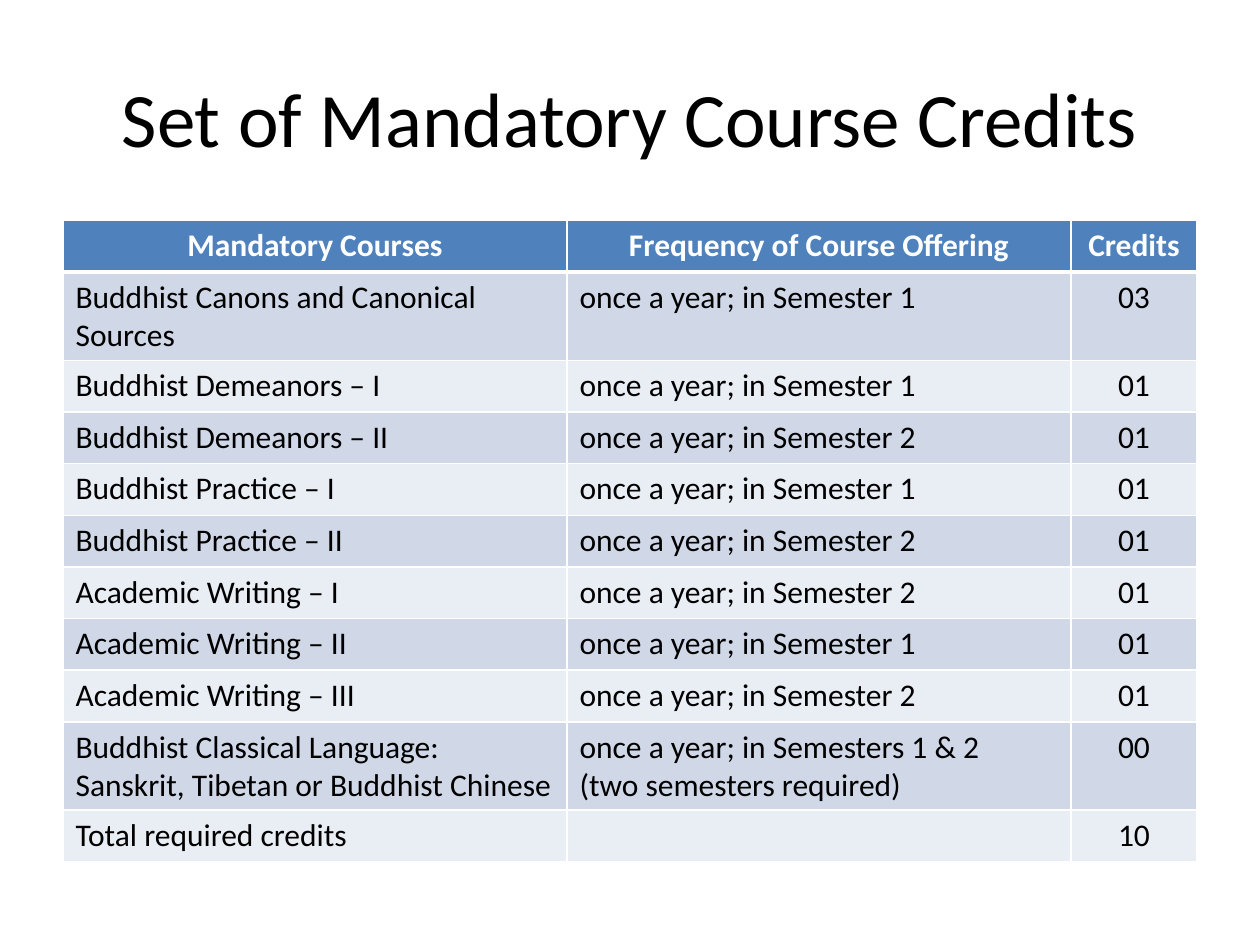
from pptx import Presentation
from pptx.dml.color import RGBColor
from pptx.enum.text import MSO_ANCHOR, PP_ALIGN
from pptx.oxml import parse_xml
from pptx.oxml.ns import nsdecls
from pptx.util import Inches, Pt

HEADER = ("Mandatory Courses", "Frequency of Course Offering", "Credits")
SEM_1 = "once a year; in Semester 1"
SEM_2 = "once a year; in Semester 2"
COURSES = [
    ("Buddhist Canons and Canonical Sources", SEM_1, "03"),
    ("Buddhist Demeanors – I", SEM_1, "01"),
    ("Buddhist Demeanors – II", SEM_2, "01"),
    ("Buddhist Practice – I", SEM_1, "01"),
    ("Buddhist Practice – II", SEM_2, "01"),
    ("Academic Writing – I", SEM_2, "01"),
    ("Academic Writing – II", SEM_1, "01"),
    ("Academic Writing – III", SEM_2, "01"),
    ("Buddhist Classical Language: Sanskrit, Tibetan or Buddhist Chinese",
     "once a year; in Semesters 1 & 2\n(two semesters required)", "00"),
    ("Total required credits", "", "10"),
]


def rgb(value):
    return RGBColor.from_string(value)


class Deck:
    font = "Calibri"
    ink = "000000"
    white = "FFFFFF"
    accent = "4F81BD"
    bands = ("D0D8E8", "E9EDF4")

    def __init__(self, width, height):
        self.prs = Presentation()
        self.prs.slide_width = Inches(width)
        self.prs.slide_height = Inches(height)
        self.s = self.prs.slides.add_slide(self.prs.slide_layouts[6])

    def add_text(self, tf, text, size, color, bold=False, align=PP_ALIGN.LEFT):
        for i, line in enumerate(text.split("\n")):
            p = tf.add_paragraph() if i else tf.paragraphs[0]
            p.alignment = align
            if not line:
                p.font.size = Pt(size)
                continue
            r = p.add_run()
            r.text = line
            r.font.name = self.font
            r.font.size = Pt(size)
            r.font.bold = bold
            r.font.color.rgb = rgb(color)

    def title(self, text, left, top, width, height):
        sp = self.s.shapes.add_textbox(
            Inches(left), Inches(top), Inches(width), Inches(height))
        tf = sp.text_frame
        tf.word_wrap = True
        tf.vertical_anchor = MSO_ANCHOR.MIDDLE
        self.add_text(tf, text, 44, self.ink, align=PP_ALIGN.CENTER)

    def borders(self, cell, top, bottom):
        tc_pr = cell._tc.get_or_add_tcPr()
        for side, points in (("L", 1), ("R", 1), ("T", top), ("B", bottom)):
            tc_pr.append(parse_xml(
                f'<a:ln{side} {nsdecls("a")} w="{Pt(points)}"><a:solidFill>'
                f'<a:srgbClr val="{self.white}"/></a:solidFill></a:ln{side}>'))

    def table(self, rows, left, top, widths, row_height):
        table = self.s.shapes.add_table(
            len(rows), len(widths), Inches(left), Inches(top),
            Inches(sum(widths)), Inches(row_height * len(rows))).table
        for column, width in zip(table.columns, widths):
            column.width = Inches(width)
        for i, row in enumerate(rows):
            table.rows[i].height = Inches(row_height)
            header = i == 0
            fill = self.accent if header else self.bands[(i - 1) % 2]
            color = self.white if header else self.ink
            for j, text in enumerate(row):
                cell = table.cell(i, j)
                self.borders(cell, 3 if i == 1 else 1, 3 if header else 1)
                cell.fill.solid()
                cell.fill.fore_color.rgb = rgb(fill)
                centred = header or j == len(row) - 1
                align = PP_ALIGN.CENTER if centred else PP_ALIGN.LEFT
                self.add_text(cell.text_frame, text, 18, color, header, align)


def main():
    deck = Deck(10, 7.5)
    deck.title("Set of Mandatory Course Credits", 0.5, 0.3, 9, 1.25)
    deck.table([HEADER] + COURSES, 0.5, 1.75, (4, 4, 1), 0.41)
    deck.prs.save("out.pptx")


if __name__ == "__main__":
    main()
